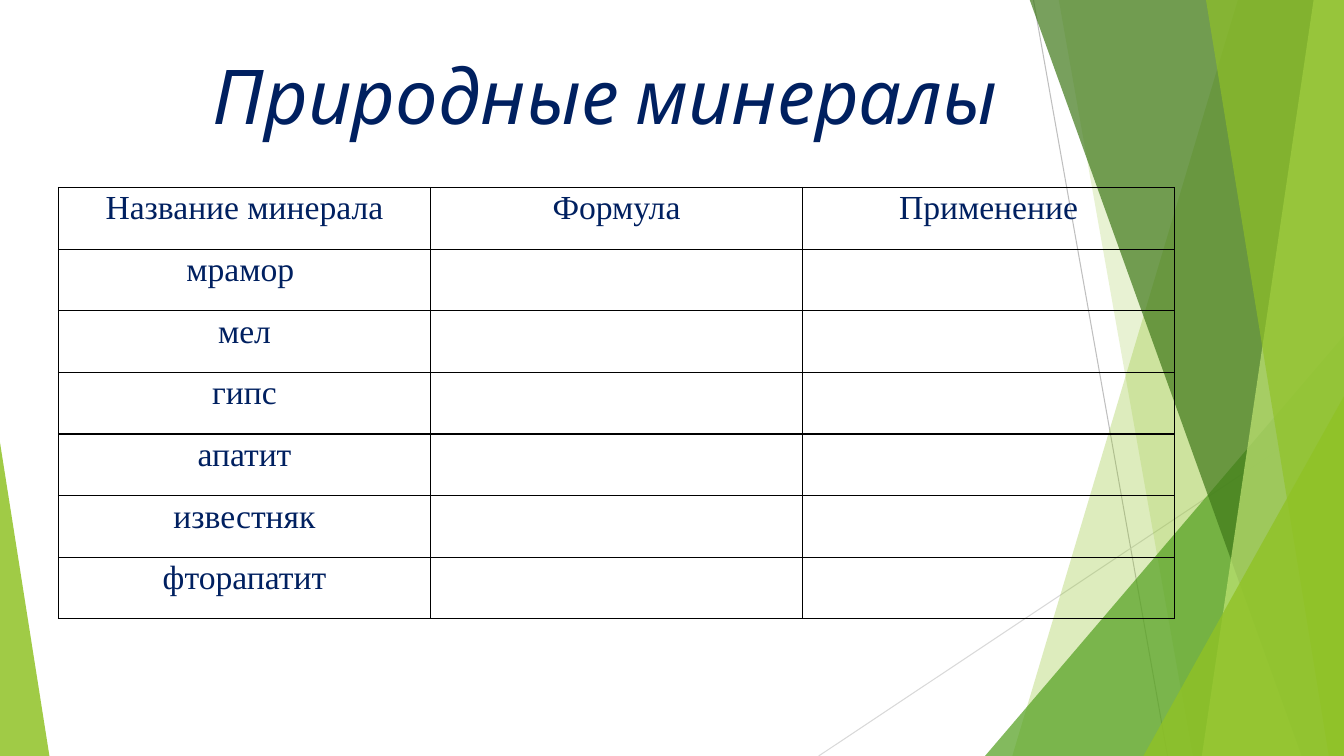
from lxml import etree
from pptx import Presentation
from pptx.dml.color import RGBColor
from pptx.enum.shapes import MSO_CONNECTOR, MSO_SHAPE
from pptx.enum.text import MSO_AUTO_SIZE, PP_ALIGN
from pptx.oxml.ns import qn
from pptx.util import Inches, Pt

STRAIGHT = MSO_CONNECTOR.STRAIGHT
TRIANGLE = MSO_SHAPE.ISOSCELES_TRIANGLE
CENTER = PP_ALIGN.CENTER

NAVY = RGBColor(0x00, 0x20, 0x60)
BLACK = RGBColor(0x00, 0x00, 0x00)
LIME = RGBColor(0x90, 0xC2, 0x26)
PALE_LIME = RGBColor(0xC0, 0xE4, 0x74)
GREEN = RGBColor(0x54, 0xA0, 0x21)
DARK_GREEN = RGBColor(0x3F, 0x78, 0x19)
GRAY = RGBColor(0xBF, 0xBF, 0xBF)
LIGHT_GRAY = RGBColor(0xD9, 0xD9, 0xD9)

TITLE = "Природные минералы"
HEADINGS = ["Название минерала", "Формула", "Применение"]
MINERALS = ["мрамор ", "мел", "гипс", "апатит", "известняк", "фторапатит"]
ROWS = [HEADINGS] + [[mineral, "", ""] for mineral in MINERALS]

WIDTH, HEIGHT = 13.33, 7.5
BAND_TOP = -0.01
TITLE_BOX = (1.98, 0.44, 8.06, 1.01)
TABLE_LEFT, TABLE_TOP = 0.58, 1.86
COLUMN_WIDTH, ROW_HEIGHT = 3.69, 0.6115

RAYS = [
    ((10.25, 0), (11.58, HEIGHT), GRAY),
    ((WIDTH, 4.03), (8.12, HEIGHT), LIGHT_GRAY),
]
# Bands reach the right edge: left end at the top, left end at the bottom.
# Peaks stand on the bottom edge: left, top, width, share where the tip sits.
FACETS = [
    ("band", (12.28, 10.04), LIME, 30),
    ("band", (10.5, 11.83), LIME, 20),
    ("peak", (9.77, 3.33, 3.56, 1), GREEN, 72),
    ("band", (10.21, 12.91), DARK_GREEN, 70),
    ("band", (13.03, 11.92), PALE_LIME, 70),
    ("band", (11.96, 13.18), LIME, 65),
    ("peak", (11.34, 3.93, 1.99, 1), LIME, 80),
    ("peak", (0, 4.39, 0.49, 0), LIME, 85),
]
CELL_FORMAT = {
    "margin_left": Inches(0.07), "margin_right": Inches(0.07),
    "margin_top": 0, "margin_bottom": 0,
}
CELL_FONT = {"name": "Times New Roman", "size": Pt(24), "bold": False}
TITLE_FONT = {"name": "Karla", "size": Pt(54), "italic": True}


def inches(values):
    return [Inches(value) for value in values]


def write(paragraph, text, font_format):
    paragraph.alignment = CENTER
    run = paragraph.add_run()
    run.text = text
    for attribute, value in font_format.items():
        setattr(run.font, attribute, value)
    run.font.color.rgb = NAVY


def add_ray(shapes, start, end, color):
    ray = shapes.add_connector(STRAIGHT, *inches(start + end))
    ray.line.color.rgb = color
    ray.line.width = Pt(0.75)
    etree.SubElement(ray._element.spPr, qn("a:effectLst"))


def add_band(shapes, top_left, bottom_left):
    corners = [(top_left, BAND_TOP), (WIDTH, BAND_TOP),
               (WIDTH, HEIGHT), (bottom_left, HEIGHT)]
    start, *others = [inches(corner) for corner in corners]
    builder = shapes.build_freeform(*start)
    builder.add_line_segments(others, close=True)
    return builder.convert_to_shape()


def add_peak(shapes, left, top, width, tip):
    peak = shapes.add_shape(TRIANGLE, *inches((left, top, width, HEIGHT - top)))
    peak.adjustments[0] = tip
    return peak


def paint(shape, color, opacity):
    """Fill without outline or shadow; opacity is in percent."""
    shape.shadow.inherit = False
    shape.line.fill.background()
    shape.fill.solid()
    shape.fill.fore_color.rgb = color
    color_node = shape._element.spPr.find(qn("a:solidFill"))[0]
    etree.SubElement(color_node, qn("a:alpha"), val=str(opacity * 1000))


def add_borders(cell):
    """Draw all four sides; borders must precede the fill in the cell XML."""
    properties = cell._tc.get_or_add_tcPr()
    for position, side in enumerate(("lnL", "lnR", "lnT", "lnB")):
        border = etree.Element(qn(f"a:{side}"), w=str(Pt(1)))
        fill = etree.SubElement(border, qn("a:solidFill"))
        etree.SubElement(fill, qn("a:srgbClr"), val=str(BLACK))
        properties.insert(position, border)


def add_minerals(shapes):
    columns = len(HEADINGS)
    size = (COLUMN_WIDTH * columns, ROW_HEIGHT * len(ROWS))
    table = shapes.add_table(
        len(ROWS), columns, *inches((TABLE_LEFT, TABLE_TOP) + size)).table
    table.first_row = table.horz_banding = False
    for r, row in enumerate(ROWS):
        for c, text in enumerate(row):
            cell = table.cell(r, c)
            for attribute, value in CELL_FORMAT.items():
                setattr(cell, attribute, value)
            cell.fill.background()
            add_borders(cell)
            if text:
                paragraph = cell.text_frame.paragraphs[0]
                paragraph.line_spacing = 1.07
                write(paragraph, text, CELL_FONT)


def add_title(shapes):
    frame = shapes.add_textbox(*inches(TITLE_BOX)).text_frame
    frame.word_wrap = False
    frame.auto_size = MSO_AUTO_SIZE.SHAPE_TO_FIT_TEXT
    write(frame.paragraphs[0], TITLE, TITLE_FONT)


def main():
    presentation = Presentation()
    presentation.slide_width, presentation.slide_height = inches((WIDTH, HEIGHT))
    shapes = presentation.slides.add_slide(presentation.slide_layouts[6]).shapes
    for ray in RAYS:
        add_ray(shapes, *ray)
    builders = {"band": add_band, "peak": add_peak}
    for kind, geometry, color, opacity in FACETS:
        paint(builders[kind](shapes, *geometry), color, opacity)
    add_minerals(shapes)
    add_title(shapes)
    presentation.save("out.pptx")


if __name__ == "__main__":
    main()
